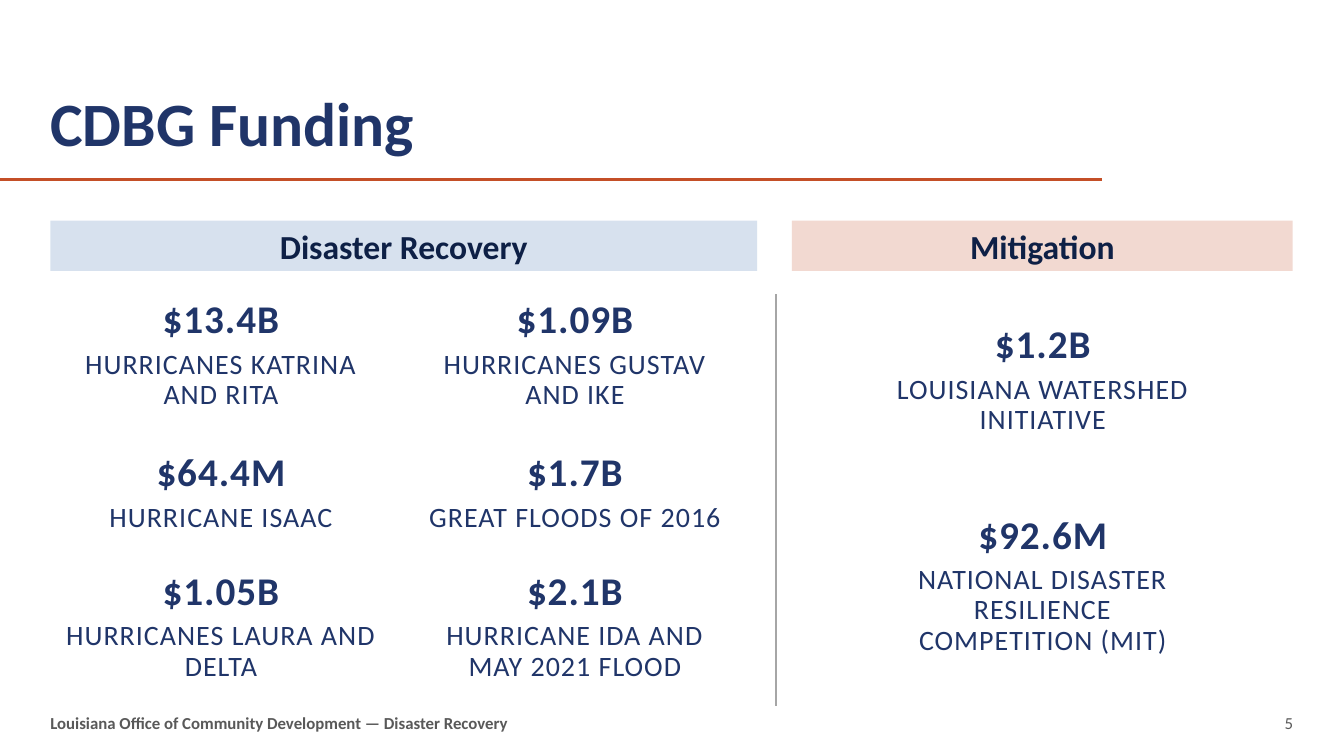
from lxml.etree import SubElement
from pptx import Presentation
from pptx.dml.color import RGBColor
from pptx.enum.shapes import MSO_CONNECTOR, MSO_SHAPE
from pptx.enum.text import MSO_ANCHOR, MSO_AUTO_SIZE, PP_ALIGN
from pptx.oxml.ns import qn
from pptx.util import Cm, Pt

NAVY = RGBColor(0x20, 0x35, 0x69)
DARK_NAVY = RGBColor(0x0E, 0x20, 0x46)
BLUE = RGBColor(0x45, 0x75, 0xB1)
RUST = RGBColor(0xC4, 0x4F, 0x27)
GREY = RGBColor(0xA6, 0xA6, 0xA6)
FOOTER_GREY = RGBColor(0x59, 0x59, 0x59)
FONT = "Calibri"

TITLE = "CDBG Funding"
FOOTER = "Louisiana Office of Community Development — Disaster Recovery"
PAGE_NUMBER = "5"

BANDS = [
    ("Disaster Recovery", 1.27, 17.81, BLUE),
    ("Mitigation", 19.96, 12.62, RUST),
]

RECOVERY_ROWS = [
    (7.42, 2, [("$13.4B", "HURRICANES KATRINA AND RITA"),
               ("$1.09B", "HURRICANES GUSTAV AND IKE")]),
    (11.28, 1, [("$64.4M", "HURRICANE ISAAC"),
                ("$1.7B", "GREAT FLOODS OF 2016")]),
    (14.27, 2, [("$1.05B", "HURRICANES LAURA AND DELTA"),
                ("$2.1B", "HURRICANE IDA AND MAY 2021 FLOOD")]),
]
MITIGATION_ROWS = [
    (8.05, 2, [("$1.2B", "LOUISIANA WATERSHED INITIATIVE")]),
    (12.85, 3, [("$92.6M", "NATIONAL DISASTER RESILIENCE COMPETITION (MIT)")]),
]

MARGIN = 1.27
FUND_WIDTH = 8
AMOUNT_HEIGHT = 1.42
LABEL_LINE_HEIGHT = 0.76
RECOVERY_LEFTS = (1.57, 10.49)
MITIGATION_LEFTS = (22.28,)


def style(paragraph, size, color, bold=False, align=PP_ALIGN.LEFT):
    paragraph.alignment = align
    for run in paragraph.runs:
        run.font.name = FONT
        run.font.size = Pt(size)
        run.font.bold = bold
        run.font.color.rgb = color


def clear_insets(frame, anchor):
    frame.margin_left = frame.margin_top = 0
    frame.margin_right = frame.margin_bottom = 0
    frame.word_wrap = True
    frame.auto_size = MSO_AUTO_SIZE.NONE
    frame.vertical_anchor = anchor


def add_text(slide, left, top, width, height, anchor, text):
    box = slide.shapes.add_textbox(Cm(left), Cm(top), Cm(width), Cm(height))
    clear_insets(box.text_frame, anchor)
    box.text_frame.text = text
    return box.text_frame


def add_line(slide, start, end, color, width):
    line = slide.shapes.add_connector(
        MSO_CONNECTOR.STRAIGHT, *map(Cm, start), *map(Cm, end))
    line.line.color.rgb = color
    line.line.width = Pt(width)
    SubElement(line._element.spPr, qn("a:effectLst"))


def add_band(slide, heading, left, width, color):
    band = slide.shapes.add_shape(
        MSO_SHAPE.RECTANGLE, Cm(left), Cm(5.56), Cm(width), Cm(1.27))
    band.shadow.inherit = False
    band.line.fill.background()
    band.fill.solid()
    band.fill.fore_color.rgb = color
    tint = band._element.spPr.find(qn("a:solidFill"))[0]
    SubElement(tint, qn("a:alpha")).set("val", "21000")
    band.text_frame.text = heading
    style(band.text_frame.paragraphs[0], 24, DARK_NAVY, True, PP_ALIGN.CENTER)


def add_fund(slide, left, top, label_lines, amount, label):
    height = AMOUNT_HEIGHT + LABEL_LINE_HEIGHT * label_lines
    frame = add_text(slide, left, top, FUND_WIDTH, height, MSO_ANCHOR.TOP, amount)
    amount_line = frame.paragraphs[0]
    amount_line.space_after = Pt(6)
    style(amount_line, 28, NAVY, True, PP_ALIGN.CENTER)
    label_line = frame.add_paragraph()
    label_line.text = label
    label_line.line_spacing = 0.9
    style(label_line, 20, NAVY, False, PP_ALIGN.CENTER)
    for paragraph in frame.paragraphs:
        paragraph.runs[0]._r.get_or_add_rPr().set("spc", "70")


def main():
    deck = Presentation()
    deck.slide_width, deck.slide_height = Cm(33.87), Cm(19.05)
    slide = deck.slides.add_slide(deck.slide_layouts[5])

    add_line(slide, (0, 4.52), (27.76, 4.52), RUST, 2.25)

    title = slide.shapes.title
    title.left, title.top = Cm(MARGIN), Cm(1.12)
    title.width, title.height = Cm(26.49), Cm(2.92)
    clear_insets(title.text_frame, MSO_ANCHOR.BOTTOM)
    title.text_frame.text = TITLE
    title.text_frame.paragraphs[0].line_spacing = 0.9
    style(title.text_frame.paragraphs[0], 44, NAVY, True)

    footer = add_text(slide, MARGIN, 17.78, 16.94, 0.89, MSO_ANCHOR.MIDDLE, FOOTER)
    style(footer.paragraphs[0], 12, FOOTER_GREY, True)
    page = add_text(slide, 24.97, 17.78, 7.62, 0.89, MSO_ANCHOR.MIDDLE, PAGE_NUMBER)
    style(page.paragraphs[0], 12, FOOTER_GREY, False, PP_ALIGN.RIGHT)

    for band in BANDS:
        add_band(slide, *band)

    for lefts, rows in ((RECOVERY_LEFTS, RECOVERY_ROWS),
                        (MITIGATION_LEFTS, MITIGATION_ROWS)):
        for top, label_lines, funds in rows:
            for left, (amount, label) in zip(lefts, funds):
                add_fund(slide, left, top, label_lines, amount, label)

    add_line(slide, (19.56, 7.42), (19.56, 17.78), GREY, 1.5)
    deck.save("out.pptx")


if __name__ == "__main__":
    main()
